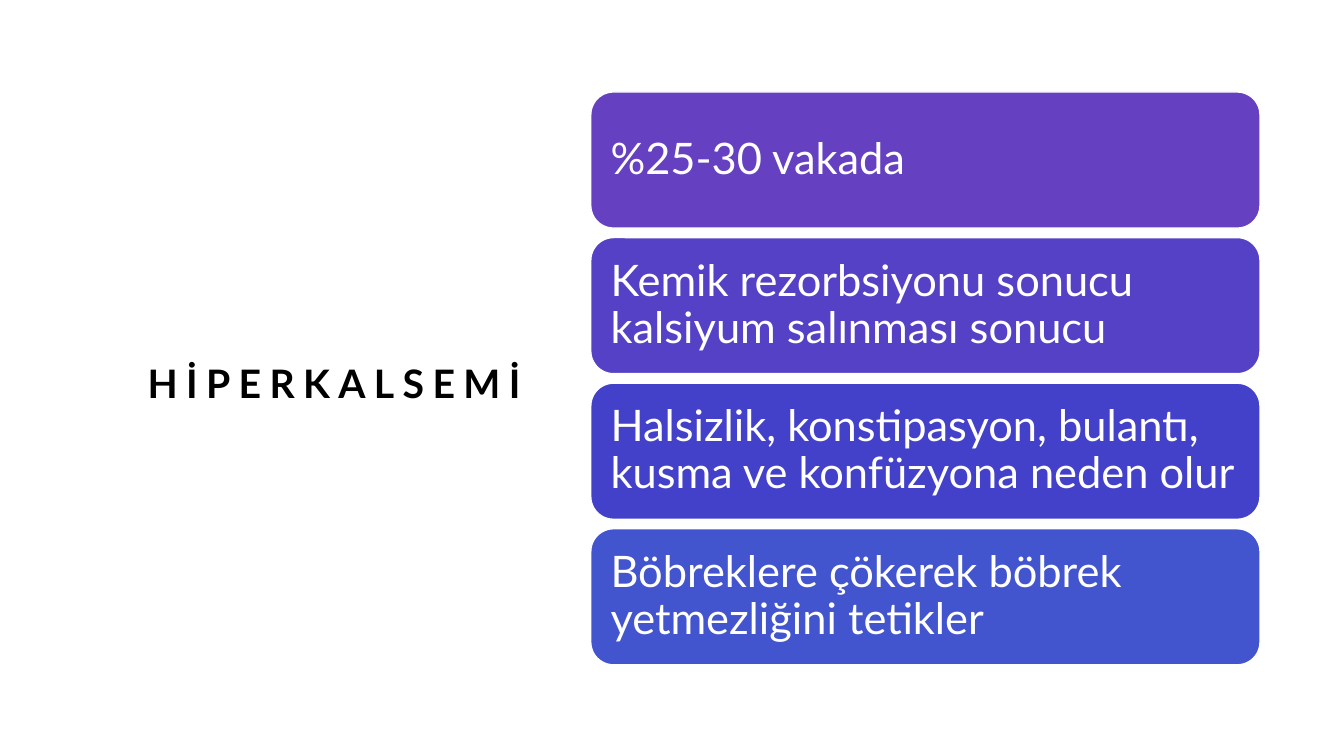
"""Build the hypercalcaemia slide: a spaced title beside four cards."""
from dataclasses import dataclass

from pptx import Presentation
from pptx.dml.color import RGBColor
from pptx.enum.shapes import MSO_SHAPE as Kind
from pptx.enum.text import MSO_ANCHOR as Anchor, PP_ALIGN as Align
from pptx.util import Pt

TOP, STEP = 65.7, 104
TITLE = {"name": "Lato", "size": Pt(28), "bold": True}
BODY = {"name": "Lato", "size": Pt(31), "bold": False}


@dataclass
class Card:
    """Text and fill of one card."""
    text: str
    fill: str


CARDS = [
    Card("%25-30 vakada", "6540C1"),
    Card("Kemik rezorbsiyonu sonucu kalsiyum salınması sonucu", "5441C5"),
    Card("Halsizlik, konstipasyon, bulantı, kusma ve konfüzyona neden olur", "4341CA"),
    Card("Böbreklere çökerek böbrek yetmezliğini tetikler", "4254CE"),
]


def paint(color, code: str) -> None:
    """Set a colour format from a hex string."""
    color.rgb = RGBColor.from_string(code)


def write(shape, text: str, style: dict, code: str, align, space: float, inset: float):
    """Fill a shape with one paragraph and return its run."""
    frame = shape.text_frame
    sides = {f"margin_{side}": Pt(inset) for side in ("left", "top", "right", "bottom")}
    for key, value in {"word_wrap": True, "vertical_anchor": Anchor.MIDDLE, **sides}.items():
        setattr(frame, key, value)
    para = frame.paragraphs[0]
    para.alignment, para.line_spacing = align, space
    run = para.add_run()
    run.text = text
    for key, value in style.items():
        setattr(run.font, key, value)
    paint(run.font.color, code)
    return run


def draw(slide, card: Card, top: float) -> None:
    """Draw one rounded card with its text."""
    box = slide.shapes.add_shape(Kind.ROUNDED_RECTANGLE, Pt(422), Pt(top), Pt(478), Pt(97.2))
    box.shadow.inherit = False
    box.fill.solid()
    paint(box.fill.fore_color, card.fill)
    paint(box.line.color, "FFFFFF")
    box.line.width = Pt(1)
    write(box, card.text, BODY, "FFFFFF", Align.LEFT, 0.9, 9.4)


def main() -> None:
    """Build and save the slide."""
    deck = Presentation()
    deck.slide_width, deck.slide_height = Pt(960), Pt(540)
    slide = deck.slides.add_slide(deck.slide_layouts[6])
    title = slide.shapes.add_textbox(Pt(95), Pt(180), Pt(287.5), Pt(180))
    run = write(title, "HİPERKALSEMİ", TITLE, "000000", Align.CENTER, 1.2, 3.6)
    run.font._element.set("spc", "600")
    for row, card in enumerate(CARDS):
        draw(slide, card, TOP + row * STEP)
    deck.save("out.pptx")


if __name__ == "__main__":
    main()
